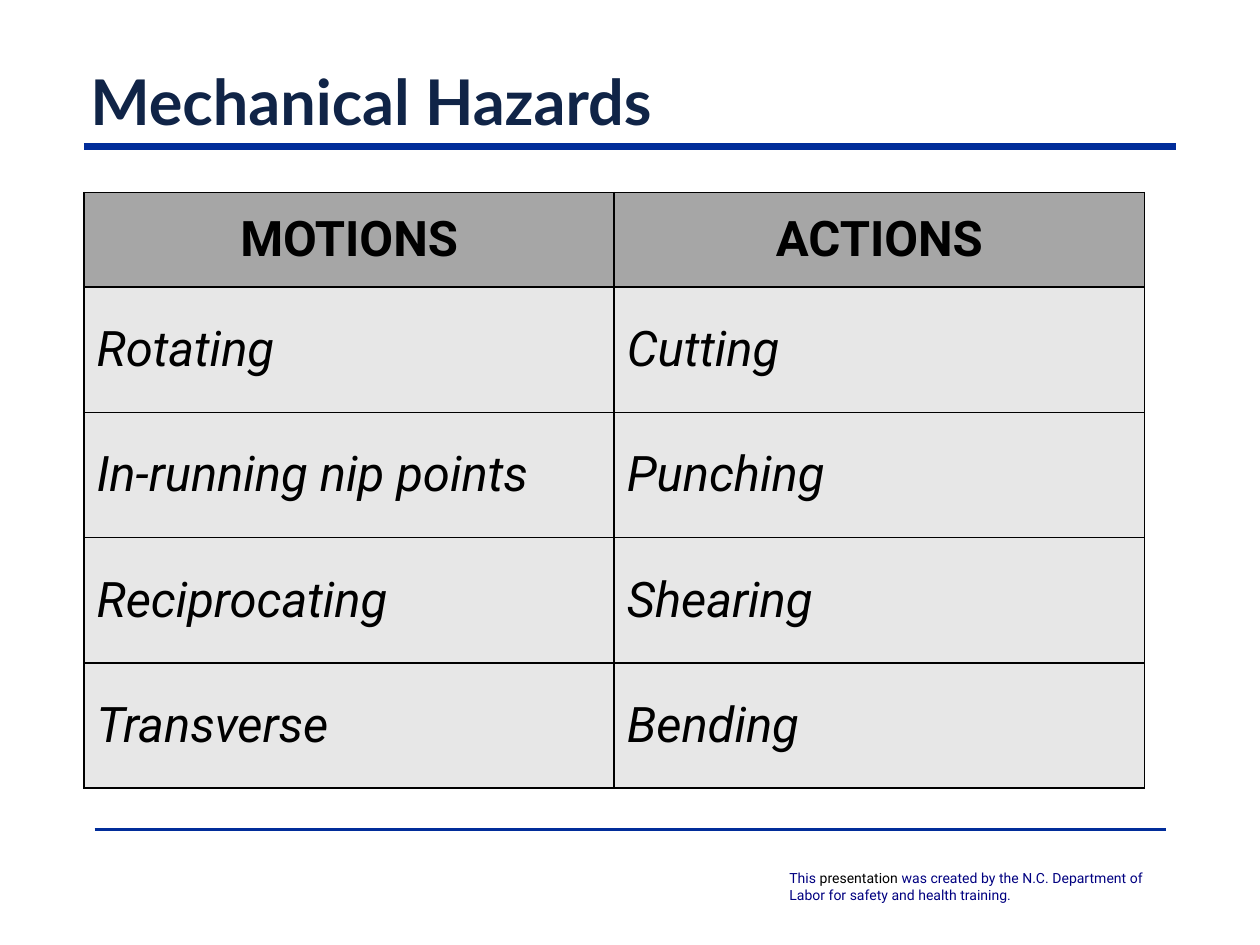
from lxml import etree
from pptx import Presentation
from pptx.dml.color import RGBColor
from pptx.enum.shapes import MSO_CONNECTOR
from pptx.enum.text import MSO_ANCHOR, PP_ALIGN
from pptx.oxml.ns import qn
from pptx.util import Inches, Pt

STRAIGHT = MSO_CONNECTOR.STRAIGHT
MIDDLE = MSO_ANCHOR.MIDDLE
LEFT, CENTER = PP_ALIGN.LEFT, PP_ALIGN.CENTER

COLORS = {
    "rule": "012D9A",
    "title": "102447",
    "credit": "000080",
    "text": "000000",
    "header": "A6A6A6",
    "body": "E7E7E7",
}
GRID_COLUMNS, GRID_ROWS = 120, 90
HEADER_ROWS, BODY_ROWS = 9, 11.93
HAZARDS = [
    ("MOTIONS", "ACTIONS"),
    ("Rotating", "Cutting"),
    ("In-running nip points", "Punching"),
    ("Reciprocating", "Shearing"),
    ("Transverse", "Bending"),
]
CREDIT = [
    [("This ", "credit"), ("presentation", "text"),
     (" was created by the N.C. Department of", "credit")],
    [("Labor for safety and health training.", "credit")],
]


def grid(units):
    """Turn grid units, twelve to the inch, into a length."""
    return Inches(units / 12)


def color(name):
    """Look up a named colour."""
    return RGBColor.from_string(COLORS[name])


def write(frame, lines, size, font="Roboto", bold=False, italic=False, align=LEFT):
    """Fill a text frame with lines made of (text, colour) pieces."""
    for index, pieces in enumerate(lines):
        paragraph = frame.add_paragraph() if index else frame.paragraphs[0]
        paragraph.alignment = align
        for text, shade in pieces:
            run = paragraph.add_run()
            run.text = text
            run.font.name, run.font.size = font, Pt(size)
            run.font.bold, run.font.italic = bold, italic
            run.font.color.rgb = color(shade)


def add_rule(slide, left, right, row, weight):
    """Draw a horizontal rule across the slide."""
    rule = slide.shapes.add_connector(
        STRAIGHT, grid(left), grid(row), grid(right), grid(row))
    rule.line.color.rgb = color("rule")
    rule.line.width = Pt(weight)
    etree.SubElement(rule._element.spPr, qn("a:effectLst"))


def add_text(slide, box, lines, size, margins=(0.1, 0.05), **style):
    """Add a wrapping text box with horizontal and vertical margins."""
    frame = slide.shapes.add_textbox(*map(grid, box)).text_frame
    frame.word_wrap = True
    frame.margin_left = frame.margin_right = Inches(margins[0])
    frame.margin_top = frame.margin_bottom = Inches(margins[1])
    write(frame, lines, size, **style)


def add_borders(cell):
    """Outline a cell with thin black lines."""
    properties = cell._tc.get_or_add_tcPr()
    for position, side in enumerate(("a:lnL", "a:lnR", "a:lnT", "a:lnB")):
        border = etree.Element(qn(side), w=str(Pt(1)))
        fill = etree.SubElement(border, qn("a:solidFill"))
        etree.SubElement(fill, qn("a:srgbClr"), val=COLORS["text"])
        properties.insert(position, border)


def add_hazard_table(slide, left, top, width):
    """Add the table of motions and actions."""
    height = HEADER_ROWS + BODY_ROWS * (len(HAZARDS) - 1)
    table = slide.shapes.add_table(
        len(HAZARDS), len(HAZARDS[0]), *map(grid, (left, top, width, height))).table
    for row, texts in enumerate(HAZARDS):
        header = row == 0
        table.rows[row].height = grid(HEADER_ROWS if header else BODY_ROWS)
        for column, text in enumerate(texts):
            cell = table.cell(row, column)
            cell.vertical_anchor = MIDDLE
            cell.fill.solid()
            cell.fill.fore_color.rgb = color("header" if header else "body")
            write(cell.text_frame, [[(text, "text")]], 28, bold=header,
                  italic=not header, align=CENTER if header else LEFT)
            add_borders(cell)


def main():
    """Build the mechanical hazards slide."""
    presentation = Presentation()
    presentation.slide_width = grid(GRID_COLUMNS)
    presentation.slide_height = grid(GRID_ROWS)
    slide = presentation.slides.add_slide(presentation.slide_layouts[6])
    add_rule(slide, 8, 112, 14, 4)
    add_rule(slide, 9, 111, 79, 2)
    add_text(slide, (74, 82.2, 37, 4.4), CREDIT, 8)
    add_text(slide, (8, 6, 104, 7.2), [[("Mechanical Hazards", "title")]], 36,
             margins=(0.05, 0), font="Lato", bold=True)
    add_hazard_table(slide, 8, 18.35, 101)
    presentation.save("out.pptx")


if __name__ == "__main__":
    main()
